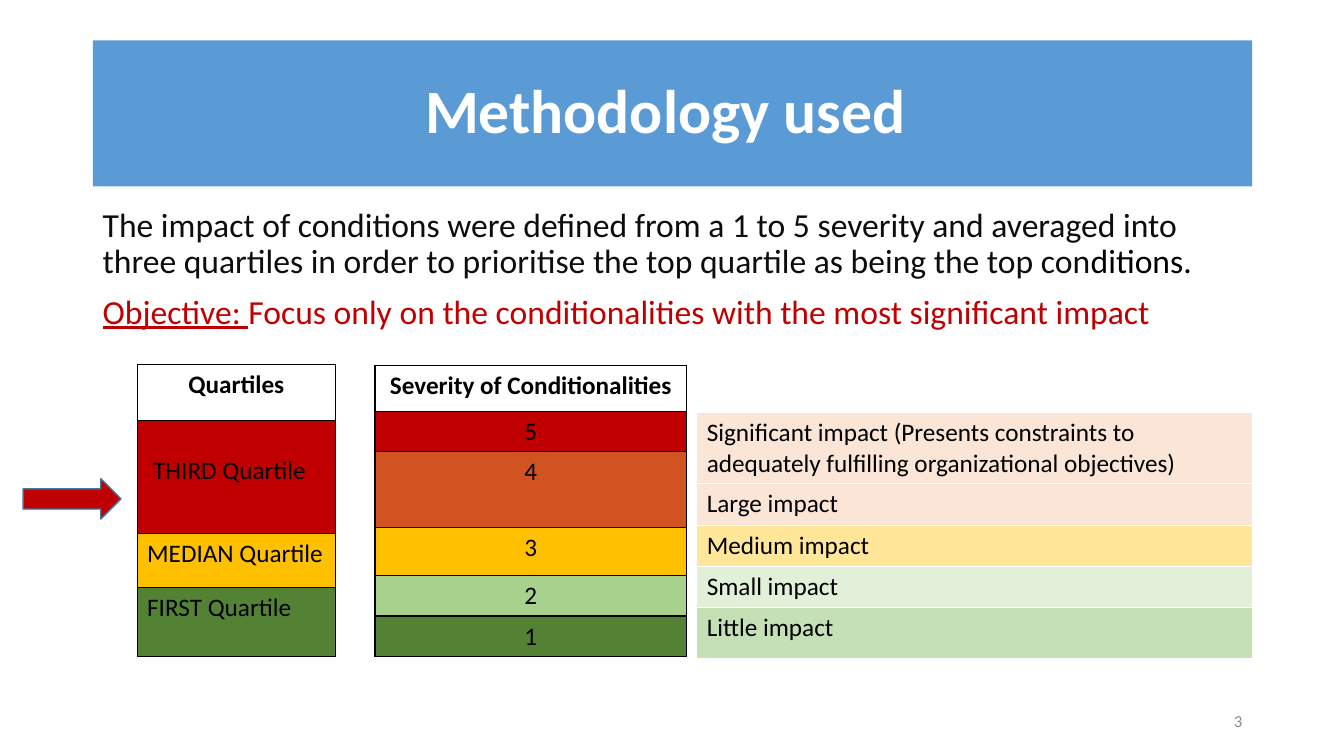
from lxml.etree import SubElement
from pptx import Presentation
from pptx.dml.color import RGBColor
from pptx.enum.shapes import MSO_SHAPE as Shape
from pptx.enum.text import MSO_ANCHOR as Anchor, PP_ALIGN as Align
from pptx.oxml.ns import qn
from pptx.util import Inches, Pt

COLORS = {
    "white": "FFFFFF", "black": "000000", "ink": "0D0D0D", "grey": "8C8C8C",
    "banner": "5B9BD5", "arrow_line": "43739E", "red": "C00000",
    "orange": "D15321", "amber": "FFC000", "light_green": "A9D18E",
    "green": "548235", "pale_orange": "FBE5D6", "pale_amber": "FFE699",
    "pale_green": "E2F0D9", "soft_green": "C5E0B4",
}


def rgb(name):
    return RGBColor.from_string(COLORS[name])


def paint(fill, name):
    fill.solid()
    fill.fore_color.rgb = rgb(name)


def add_text(paragraph, text, size=18, color="black", bold=False,
             underline=False, align=Align.LEFT, line=None, before=None):
    paragraph.alignment = align
    if line:
        paragraph.line_spacing = line
    if before is not None:
        paragraph.space_before = Pt(before)
    run = paragraph.add_run()
    run.text = text
    font = run.font
    font.name, font.size = "Calibri", Pt(size)
    font.bold, font.underline = bold, underline
    font.color.rgb = rgb(color)


def add_borders(cell, color):
    properties = cell._tc.get_or_add_tcPr()
    for place, side in enumerate(("lnL", "lnR", "lnT", "lnB")):
        border = SubElement(properties, qn(f"a:{side}"), w=str(Pt(1)))
        solid = SubElement(border, qn("a:solidFill"))
        SubElement(solid, qn("a:srgbClr"), val=COLORS[color])
        properties.insert(place, border)


def add_banner(slide, box):
    title = slide.shapes.title
    title.left, title.top, title.width, title.height = map(Inches, box)
    paint(title.fill, "banner")
    title.text_frame.vertical_anchor = Anchor.MIDDLE
    add_text(title.text_frame.paragraphs[0], "Methodology used ", size=44,
             color="white", bold=True, align=Align.CENTER, line=0.9)


def add_intro(slide, box):
    frame = slide.shapes.add_textbox(*map(Inches, box)).text_frame
    frame.word_wrap = True
    impact, objective = frame.paragraphs[0], frame.add_paragraph()
    spacing = {"size": 24, "line": 0.9, "before": 10}
    add_text(impact, "The impact of conditions were defined from a 1 to 5 "
             "severity and averaged into three quartiles in order to "
             "prioritise the top quartile as being the top con",
             color="ink", **spacing)
    add_text(impact, "ditions.", **spacing)
    add_text(objective, "Objective: ", color="red", underline=True, **spacing)
    add_text(objective, "Focus only on the conditionalities with the most "
             "significant impact", color="red", **spacing)


def add_scale(slide, left, top, width, rows, border, align=Align.LEFT):
    """One-column table; rows hold (text, fill, height), heading first."""
    height = sum(row[2] for row in rows)
    table = slide.shapes.add_table(
        len(rows), 1, *map(Inches, (left, top, width, height))).table
    table.first_row = table.horz_banding = False
    for index, (text, fill, row_height) in enumerate(rows):
        table.rows[index].height = Inches(row_height)
        cell = table.cell(index, 0)
        paint(cell.fill, fill)
        add_borders(cell, border)
        if text:
            heading = index == 0
            add_text(cell.text_frame.paragraphs[0], text, bold=heading,
                     align=Align.CENTER if heading else align)
    return table


def add_quartiles(slide, left, top, width):
    table = add_scale(slide, left, top, width, [
        ("Quartiles", "white", 0.55),
        ("THIRD Quartile", "red", 1.12),
        ("MEDIAN Quartile", "amber", 0.54),
        ("FIRST Quartile", "green", 0.68),
    ], "black")
    third = table.cell(1, 0)
    third.margin_top, third.margin_left = Inches(0.35), Inches(0.16)


def add_severity(slide, left, top, width):
    add_scale(slide, left, top, width, [
        ("Severity of Conditionalities", "white", 0.45),
        ("5", "red", 0.4),
        ("4", "orange", 0.75),
        ("3", "amber", 0.48),
        ("2", "light_green", 0.4),
        ("1", "green", 0.4),
    ], "black", Align.CENTER)


def add_impacts(slide, left, top, width):
    add_scale(slide, left, top, width, [
        ("", "white", 0.47),
        ("Significant impact (Presents constraints to adequately fulfilling "
         "organizational objectives)", "pale_orange", 0.71),
        ("Large impact", "pale_orange", 0.41),
        ("Medium impact", "pale_amber", 0.41),
        ("Small impact", "pale_green", 0.41),
        ("Little impact", "soft_green", 0.5),
    ], "white")


def add_focus_arrow(slide, box):
    arrow = slide.shapes.add_shape(Shape.RIGHT_ARROW, *map(Inches, box))
    arrow.shadow.inherit = False
    paint(arrow.fill, "red")
    arrow.line.color.rgb = rgb("arrow_line")
    arrow.line.width = Pt(1)


def add_page_number(slide, box):
    frame = slide.shapes.add_textbox(*map(Inches, box)).text_frame
    frame.word_wrap = True
    frame.vertical_anchor = Anchor.MIDDLE
    add_text(frame.paragraphs[0], "3", size=12, color="grey",
             align=Align.RIGHT)


def main():
    deck = Presentation()
    deck.slide_width, deck.slide_height = Inches(13.33), Inches(7.5)
    slide = deck.slides.add_slide(deck.slide_layouts[5])
    # Heading and explanation
    add_banner(slide, (0.92, 0.4, 11.5, 1.45))
    add_intro(slide, (0.92, 2.02, 11.5, 1.4))
    # Three scales side by side, with the top quartile marked
    add_quartiles(slide, 1.36, 3.62, 1.97)
    add_focus_arrow(slide, (0.23, 4.75, 0.97, 0.4))
    add_severity(slide, 3.72, 3.63, 3.09)
    add_impacts(slide, 6.91, 3.62, 5.51)
    # Footer
    add_page_number(slide, (9.42, 6.95, 3, 0.4))
    deck.save("out.pptx")


if __name__ == "__main__":
    main()
